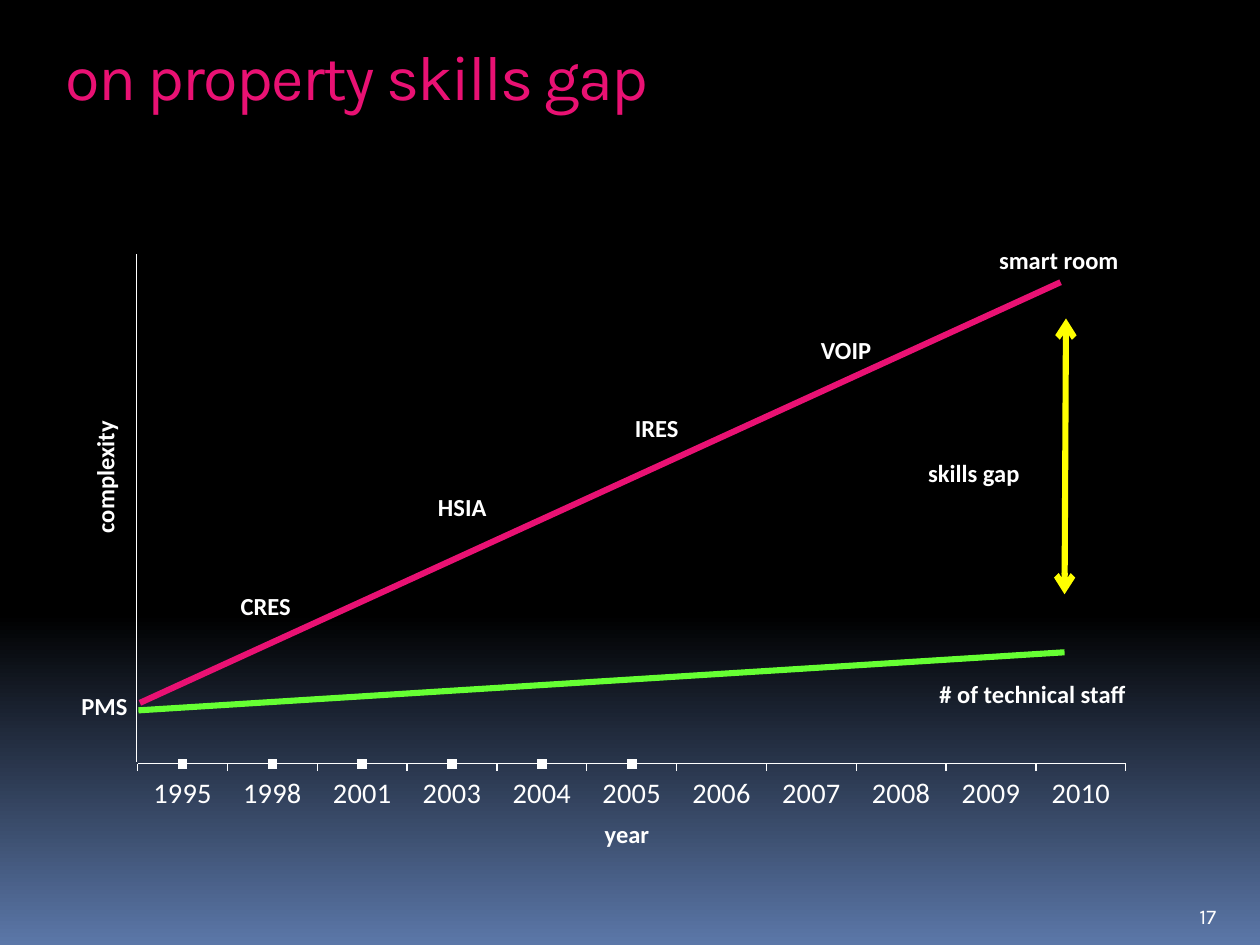
from lxml import etree
from pptx import Presentation
from pptx import util as u
from pptx.chart.data import CategoryChartData
from pptx.dml.color import RGBColor
from pptx.enum import chart as charts, shapes, text
from pptx.oxml.ns import qn

WHITE, PINK, YELLOW, GREEN = "FFFFFF", "E91173", "FFFF00", "66FF33"
YEARS = ["1995", "1998", "2001", "2003", "2004", "2005",
         "2006", "2007", "2008", "2009", "2010"]
LABELS = [
    ("complexity", -1.7, 5.05, 2.92, 270),
    ("year", 9.58, 12.32, 1.57, 0),
    ("PMS", -0.97, 9.75, 1.52, 0),
    ("CRES", 2.24, 7.72, 1.68, 0),
    ("HSIA", 6.22, 5.74, 1.63, 0),
    ("IRES", 10.19, 4.14, 1.55, 0),
    ("VOIP", 13.94, 2.57, 1.63, 0),
    ("smart room", 17.53, 0.76, 3.02, 0),
    ("skills gap", 16.1, 5.05, 2.49, 0),
    ("# of technical staff", 16.33, 9.5, 4.52, 0),
]
LINES = [
    ((0.46, 10.11), (19.02, 1.63), PINK, 3.5, False),
    ((19.13, 2.36), (19.1, 7.92), YELLOW, 3.5, True),
    ((0.43, 10.26), (19.1, 9.09), GREEN, 3.5, False),
    ((0.38, 1.07), (0.38, 11.3), WHITE, 0.25, False),
]


def rgb(color):
    return RGBColor.from_string(color)


def style_font(font, name, size, color, bold=False):
    font.name, font.size, font.bold = name, u.Pt(size), bold
    font.color.rgb = rgb(color)


def add_text(slide, box, words, name, size, color, bold=False,
             wrap=True, anchor=text.MSO_ANCHOR.TOP):
    shape = slide.shapes.add_textbox(*map(u.Cm, box))
    frame = shape.text_frame
    frame.word_wrap = wrap
    frame.vertical_anchor = anchor
    paragraph = frame.paragraphs[0]
    paragraph.text = words
    style_font(paragraph.font, name, size, color, bold)
    return shape


def add_line(slide, start, end, color, width, arrows):
    line = slide.shapes.add_connector(
        shapes.MSO_CONNECTOR.STRAIGHT, *map(u.Cm, (*start, *end)))
    line.line.color.rgb = rgb(color)
    line.line.width = u.Pt(width)
    if arrows:
        outline = line.line._get_or_add_ln()
        for tag in ("a:headEnd", "a:tailEnd"):
            etree.SubElement(outline, qn(tag)).set("type", "arrow")
    etree.SubElement(line._element.spPr, qn("a:effectLst"))


def set_plot_area(chart, **fractions):
    area = chart._chartSpace.chart.plotArea
    for layout in area.findall(qn("c:layout")):
        area.remove(layout)
    layout = etree.Element(qn("c:layout"))
    area.insert(0, layout)
    manual = etree.SubElement(layout, qn("c:manualLayout"))
    settings = {"layoutTarget": "inner", "xMode": "edge", "yMode": "edge", **fractions}
    for tag, value in settings.items():
        etree.SubElement(manual, qn("c:" + tag)).set("val", str(value))


def add_timeline(slide, box):
    data = CategoryChartData()
    data.categories = YEARS
    data.add_series("Series 1", [0] * 6 + [None] * 5)
    chart = slide.shapes.add_chart(
        charts.XL_CHART_TYPE.LINE_MARKERS, *map(u.Cm, box), data).chart
    style_font(chart.font, "Calibri", 16.2, WHITE)
    chart.has_legend = chart.has_title = False
    chart.plots[0].vary_by_categories = False
    set_plot_area(chart, x=0.02, y=0.03, w=0.96, h=0.87)

    values = chart.value_axis
    values.visible = values.has_major_gridlines = False
    values.minimum_scale, values.maximum_scale = 0, 1
    years = chart.category_axis
    years.major_tick_mark = charts.XL_TICK_MARK.OUTSIDE
    years.format.line.color.rgb = rgb(WHITE)
    years.format.line.width = u.Pt(0.75)

    series = chart.plots[0].series[0]
    series.smooth = False
    series.format.line.fill.background()
    marker = series.marker
    marker.style, marker.size = charts.XL_MARKER_STYLE.SQUARE, 5
    marker.format.fill.solid()
    marker.format.fill.fore_color.rgb = rgb(WHITE)
    marker.format.line.fill.background()


def add_skills_graph(slide, box):
    left, top = box[:2]
    add_timeline(slide, box)
    for words, x, y, width, rotation in LABELS:
        label = add_text(slide, (left + x, top + y, width, 0.86), words,
                         "Calibri", 14, WHITE, bold=True, wrap=False)
        label.rotation = rotation
    for (x1, y1), (x2, y2), color, width, arrows in LINES:
        add_line(slide, (left + x1, top + y1), (left + x2, top + y2),
                 color, width, arrows)


def add_title(slide, box):
    shape = add_text(slide, box, "on property skills gap", "Karla", 36, PINK)
    run = shape.text_frame.paragraphs[0].runs[0]
    run._r.get_or_add_rPr().set("spc", "-100")


def add_page_number(slide, box):
    add_text(slide, box, "17", "Karla", 12, WHITE, anchor=text.MSO_ANCHOR.BOTTOM)


def set_background(slide):
    fill = slide.background.fill
    fill.gradient()
    fill.gradient_angle = 270
    for stop, position, color in zip(fill.gradient_stops, (0.65, 1), ("000000", "5B77A8")):
        stop.position = position
        stop.color.rgb = rgb(color)


def main():
    presentation = Presentation()
    presentation.slide_width, presentation.slide_height = u.Cm(25.4), u.Cm(19.05)
    slide = presentation.slides.add_slide(presentation.slide_layouts[6])
    set_background(slide)
    add_page_number(slide, (23.93, 17.83, 1.27, 1.02))
    add_skills_graph(slide, (2.36, 4.06, 20.75, 12.6))
    add_title(slide, (1.07, 0.64, 21.59, 2.54))
    presentation.save("out.pptx")


if __name__ == "__main__":
    main()
